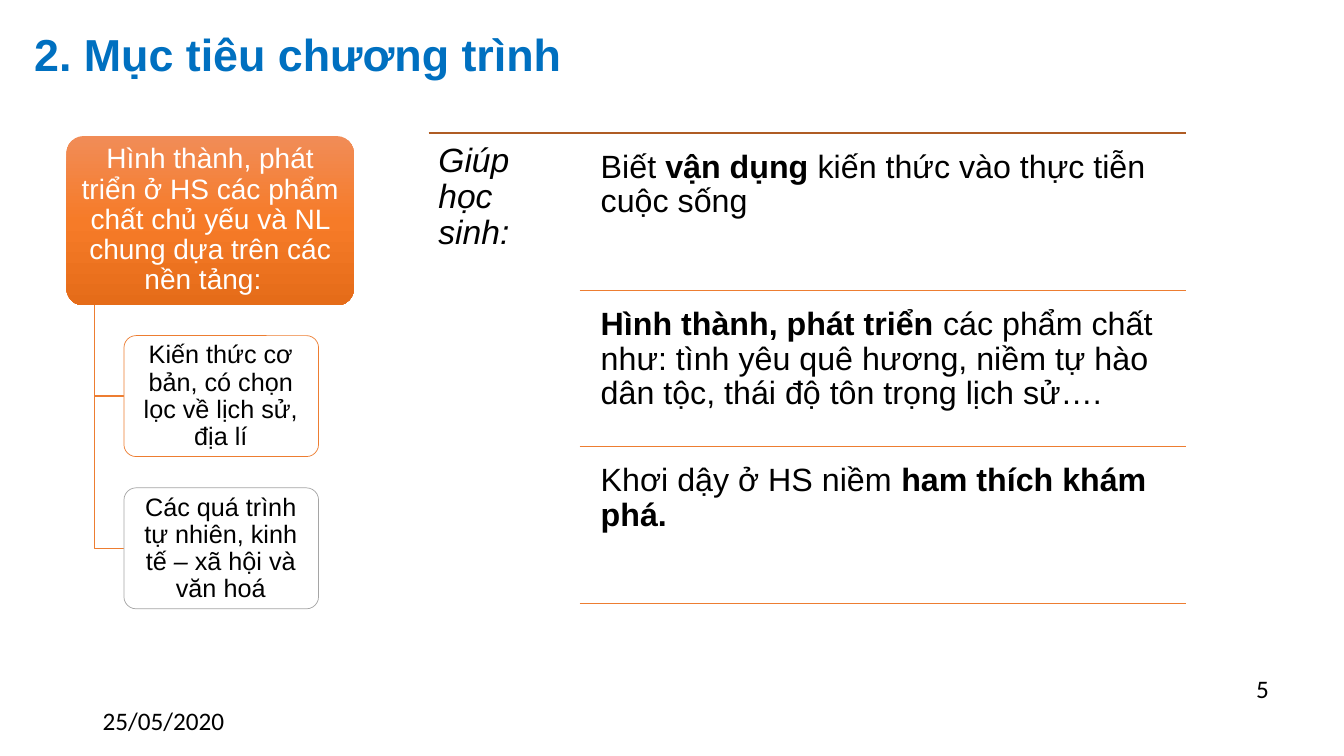
from copy import deepcopy

from lxml import etree
from pptx import Presentation
from pptx import util as u
from pptx.dml.color import RGBColor
from pptx.enum import shapes, text
from pptx.oxml.ns import qn

PX = 9144
BLUE = RGBColor(0x00, 0x70, 0xC0)
BLACK = RGBColor(0x00, 0x00, 0x00)
WHITE = RGBColor(0xFF, 0xFF, 0xFF)
ORANGE = RGBColor(0xED, 0x7D, 0x31)
BROWN = RGBColor(0xAF, 0x5C, 0x24)
GRAY = RGBColor(0xA5, 0xA5, 0xA5)
GRADIENT = [
    (0, RGBColor(0xF1, 0x8C, 0x57)),
    (0.5, RGBColor(0xF6, 0x7B, 0x28)),
    (1, RGBColor(0xE5, 0x6C, 0x19)),
]

PLAIN = {"margins": (10, 5, 10, 5)}
NODE = {
    "margins": (4, 3, 4, 3),
    "vertical_anchor": text.MSO_ANCHOR.MIDDLE,
    "alignment": text.PP_ALIGN.CENTER,
    "line_spacing": 0.9,
}
ROW = {"margins": (10, 10, 10, 10), "line_spacing": 0.9}

presentation = Presentation()
presentation.slide_width = 1333 * PX
presentation.slide_height = 750 * PX
slide = presentation.slides.add_slide(presentation.slide_layouts[6])


def add_text(box, runs, size, layout, color=BLACK, name="Arial"):
    textbox = slide.shapes.add_textbox(*[length * PX for length in box])
    frame = textbox.text_frame
    frame.word_wrap = True
    for side, margin in zip(("left", "top", "right", "bottom"), layout["margins"]):
        setattr(frame, f"margin_{side}", margin * PX)
    frame.vertical_anchor = layout.get("vertical_anchor", text.MSO_ANCHOR.TOP)
    paragraph = frame.paragraphs[0]
    for key in ("alignment", "line_spacing"):
        setattr(paragraph, key, layout.get(key))
    for words, changes in runs:
        run = paragraph.add_run()
        run.text = words
        run.font.color.rgb = color
        for key, value in {"name": name, "size": u.Pt(size), **changes}.items():
            setattr(run.font, key, value)
    return textbox


def add_rounded(left, top, width, height):
    shape = slide.shapes.add_shape(
        shapes.MSO_SHAPE.ROUNDED_RECTANGLE,
        left * PX, top * PX, width * PX, height * PX,
    )
    shape.adjustments[0] = 0.1
    shape.shadow.inherit = False
    return shape


add_text((92, 695, 300, 40), [("25/05/2020", {})], 18, PLAIN, name="Calibri")
add_text((1236, 663, 33, 40), [("5", {})], 18, PLAIN, name="Calibri")
title = add_text(
    (24, 22, 642, 64), [("2. Mục tiêu chương trình", {"bold": True})], 32, PLAIN, BLUE
)
title.text_frame.auto_size = text.MSO_AUTO_SIZE.SHAPE_TO_FIT_TEXT

root = add_rounded(66, 135, 285, 168)
root.line.fill.background()
root.fill.gradient()
root.fill.gradient_angle = 270
stop_list = root.fill._fill._gradFill.find(qn("a:gsLst"))
stop_list.insert(1, deepcopy(stop_list[0]))
for stop, (position, color) in zip(root.fill.gradient_stops, GRADIENT):
    stop.position = position
    stop.color.rgb = color
add_text(
    (71, 139, 275, 159),
    [
        ("Hình thành, phát triển ở HS các phẩm chất chủ yếu và NL chung dựa trên các nền tảng: ", {}),
        (" ", {"size": u.Pt(17)}),
    ],
    20, NODE, WHITE,
)

foundations = [
    (ORANGE, [("Kiến thức cơ bản, có chọn lọc về lịch sử, địa lí", {})]),
    (GRAY, [
        ("Các quá trình tự nhiên, kinh tế ", {}),
        ("– ", {"italic": True}),
        ("xã hội và văn hoá", {}),
    ]),
]
for index, (outline, runs) in enumerate(foundations):
    top = 333 + index * 151
    builder = slide.shapes.build_freeform(94, 303, scale=PX)
    builder.add_line_segments([(94, top + 60), (123, top + 60)], close=False)
    branch = builder.convert_to_shape()
    branch.shadow.inherit = False
    branch.fill.background()
    branch.line.color.rgb = ORANGE
    branch.line.width = u.Pt(1)

    node = add_rounded(123, top, 193, 120)
    node.fill.solid()
    node.fill.fore_color.rgb = WHITE
    white = node._element.spPr.find(qn("a:solidFill"))[0]
    etree.SubElement(white, qn("a:alpha"), val="90000")
    node.line.color.rgb = outline
    node.line.width = u.Pt(0.5)
    add_text((126, top + 4, 186, 113), runs, 18, NODE)

add_text((425, 132, 150, 475), [("Giúp học sinh:", {"italic": True})], 24, ROW)

goals = [
    [("Biết ", {}), ("vận dụng ", {"bold": True}),
     ("kiến thức vào thực tiễn cuộc sống", {})],
    [("Hình thành, phát triển ", {"bold": True}),
     ("các phẩm chất như: tình yêu quê hương, niềm tự hào dân tộc, "
      "thái độ tôn trọng lịch sử….", {})],
    [("Khơi dậy ở HS niềm ", {}), ("ham thích khám phá.", {"bold": True})],
]
dividers = [round(132 + index * 155.6) for index in range(len(goals) + 1)]
for index, top in enumerate(dividers):
    left, color = (575, ORANGE) if index else (425, BROWN)
    divider = slide.shapes.add_connector(
        shapes.MSO_CONNECTOR.STRAIGHT, left * PX, top * PX, 1176 * PX, top * PX
    )
    divider.line.color.rgb = color
    divider.line.width = u.Pt(1)
    etree.SubElement(divider._element.spPr, qn("a:effectLst"))
for top, runs in zip(dividers, goals):
    add_text((586, top + 7, 589, 148), runs, 23, ROW)

presentation.save("out.pptx")
